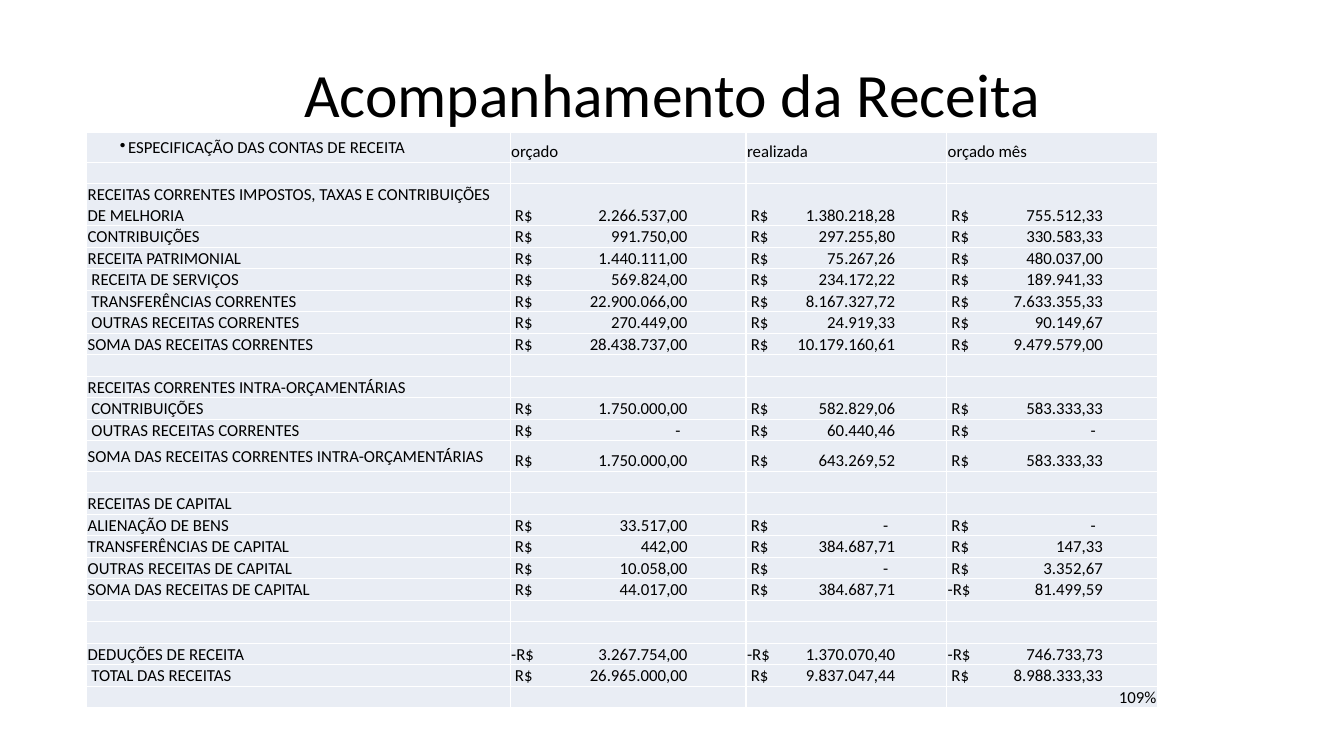
import pptx
import pptx.dml.color
import pptx.enum.text
import pptx.oxml.ns
import pptx.util
from lxml import etree

Inches = pptx.util.Inches
Pt = pptx.util.Pt
qn = pptx.oxml.ns.qn
PP_ALIGN = pptx.enum.text.PP_ALIGN
ANCHOR = pptx.enum.text.MSO_ANCHOR

BLACK = pptx.dml.color.RGBColor(0x00, 0x00, 0x00)
WHITE = pptx.dml.color.RGBColor(0xFF, 0xFF, 0xFF)
PALE_BLUE = pptx.dml.color.RGBColor(0xE9, 0xED, 0xF4)
FONT = "Calibri"

COLUMN_WIDTHS = [4.2, 2.34, 1.99, 2.09]
AMOUNT_TABS = [1.75, 1.47, 1.54]  # right edge of the amounts in each column
DASH_SHIFT = 0.07
ROW_HEIGHT = 0.18
TALL_ROW_HEIGHT = 0.3
BULLET_WIDTH = 0.08

HEADINGS = ["ESPECIFICAÇÃO DAS CONTAS DE RECEITA", "orçado", "realizada", "orçado mês"]
LONG_LABELS = [
    "RECEITAS CORRENTES IMPOSTOS, TAXAS E CONTRIBUIÇÕES DE MELHORIA",
    "SOMA DAS RECEITAS CORRENTES INTRA-ORÇAMENTÁRIAS",
]
BLANK = [""]
# Label, then budgeted, collected and monthly amounts; "-" alone is zero
ACCOUNTS = [
    BLANK,
    [LONG_LABELS[0], "2.266.537,00", "1.380.218,28", "755.512,33"],
    ["CONTRIBUIÇÕES", "991.750,00", "297.255,80", "330.583,33"],
    ["RECEITA PATRIMONIAL", "1.440.111,00", "75.267,26", "480.037,00"],
    [" RECEITA DE SERVIÇOS", "569.824,00", "234.172,22", "189.941,33"],
    [" TRANSFERÊNCIAS CORRENTES", "22.900.066,00", "8.167.327,72", "7.633.355,33"],
    [" OUTRAS RECEITAS CORRENTES", "270.449,00", "24.919,33", "90.149,67"],
    ["SOMA DAS RECEITAS CORRENTES", "28.438.737,00", "10.179.160,61", "9.479.579,00"],
    BLANK,
    ["RECEITAS CORRENTES INTRA-ORÇAMENTÁRIAS"],
    [" CONTRIBUIÇÕES", "1.750.000,00", "582.829,06", "583.333,33"],
    [" OUTRAS RECEITAS CORRENTES", "-", "60.440,46", "-"],
    [LONG_LABELS[1], "1.750.000,00", "643.269,52", "583.333,33"],
    BLANK,
    ["RECEITAS DE CAPITAL"],
    ["ALIENAÇÃO DE BENS", "33.517,00", "-", "-"],
    ["TRANSFERÊNCIAS DE CAPITAL", "442,00", "384.687,71", "147,33"],
    ["OUTRAS RECEITAS DE CAPITAL", "10.058,00", "-", "3.352,67"],
    ["SOMA DAS RECEITAS DE CAPITAL", "44.017,00", "384.687,71", "-81.499,59"],
    BLANK,
    BLANK,
    ["DEDUÇÕES DE RECEITA", "-3.267.754,00", "-1.370.070,40", "-746.733,73"],
    [" TOTAL DAS RECEITAS", "26.965.000,00", "9.837.047,44", "8.988.333,33"],
    BLANK,
]
MONTH_SHARE = "109%"


def set_font(font, size):
    font.name = FONT
    font.size = Pt(size)
    font.color.rgb = BLACK


def add_title(page, left, top, width, height):
    title = page.shapes.title
    title.left, title.top = Inches(left), Inches(top)
    title.width, title.height = Inches(width), Inches(height)
    title.text_frame.text = "Acompanhamento da Receita"
    title.text_frame.vertical_anchor = ANCHOR.MIDDLE
    para = title.text_frame.paragraphs[0]
    para.alignment = PP_ALIGN.CENTER
    set_font(para.font, 44)


def style_cell(cell, anchor):
    """White borders, pale fill and narrow margins."""
    properties = cell._tc.get_or_add_tcPr()
    for side in ("a:lnL", "a:lnR", "a:lnT", "a:lnB"):
        line = etree.SubElement(properties, qn(side), w=str(Pt(1)))
        paint = etree.SubElement(line, qn("a:solidFill"))
        etree.SubElement(paint, qn("a:srgbClr"), val=str(WHITE))
    cell.fill.solid()
    cell.fill.fore_color.rgb = PALE_BLUE
    cell.margin_left = cell.margin_right = cell.margin_top = Inches(0.01)
    cell.margin_bottom = 0
    cell.vertical_anchor = anchor


def add_bullet(para):
    properties = para._p.get_or_add_pPr()
    properties.set("marL", str(Inches(BULLET_WIDTH)))
    properties.set("indent", str(-Inches(BULLET_WIDTH)))
    etree.SubElement(properties, qn("a:buChar"), char="•")


def write_amount(para, amount, tab):
    """Currency sign at the left, number against a right tab stop."""
    if amount == "-":
        sign, number, tab = " ", amount, tab - DASH_SHIFT
    elif amount.startswith("-"):
        sign, number = "-", amount[1:]
    else:
        sign, number = " ", amount
    para.text = f"{sign}R$\t{number}"
    stops = etree.SubElement(para._p.get_or_add_pPr(), qn("a:tabLst"))
    etree.SubElement(stops, qn("a:tab"), pos=str(Inches(tab)), algn="r")


def add_revenue_table(page, left, top):
    row_count = len(ACCOUNTS) + 1
    frame = page.shapes.add_table(
        row_count, len(COLUMN_WIDTHS), Inches(left), Inches(top),
        Inches(sum(COLUMN_WIDTHS)), Inches(ROW_HEIGHT * row_count))
    table = frame.table
    table.first_row = table.horz_banding = False
    for column, width in zip(table.columns, COLUMN_WIDTHS):
        column.width = Inches(width)

    for row_index, texts in enumerate([HEADINGS] + ACCOUNTS):
        is_heading = row_index == 0
        is_tall = is_heading or texts[0] in LONG_LABELS
        row = table.rows[row_index]
        row.height = Inches(TALL_ROW_HEIGHT if is_tall else ROW_HEIGHT)
        for column_index, cell in enumerate(row.cells):
            style_cell(cell, ANCHOR.BOTTOM if column_index else ANCHOR.MIDDLE)
            para = cell.text_frame.paragraphs[0]
            text = texts[column_index] if column_index < len(texts) else ""
            if text and column_index and not is_heading:
                write_amount(para, text, AMOUNT_TABS[column_index - 1])
            elif text:
                para.text = text
            elif (row_index, column_index) != (row_count - 1, 3):
                # Keep empty rows as low as the written ones
                etree.SubElement(para._p, qn("a:endParaRPr"), sz="1200")
            if is_heading and column_index == 0:
                cell.margin_left = Inches(0.33)
                add_bullet(para)
            set_font(para.font, 12)

    # Share of the monthly budget in the last cell
    share = table.cell(row_count - 1, 3).text_frame.paragraphs[0]
    share.text = MONTH_SHARE
    share.alignment = PP_ALIGN.RIGHT


def main():
    deck = pptx.Presentation()
    deck.slide_width, deck.slide_height = Inches(13.33), Inches(7.5)
    page = deck.slides.add_slide(deck.slide_layouts[5])
    add_title(page, 0.67, 0.3, 12, 1.25)
    add_revenue_table(page, 0.86, 1.31)
    deck.save("out.pptx")


if __name__ == "__main__":
    main()
